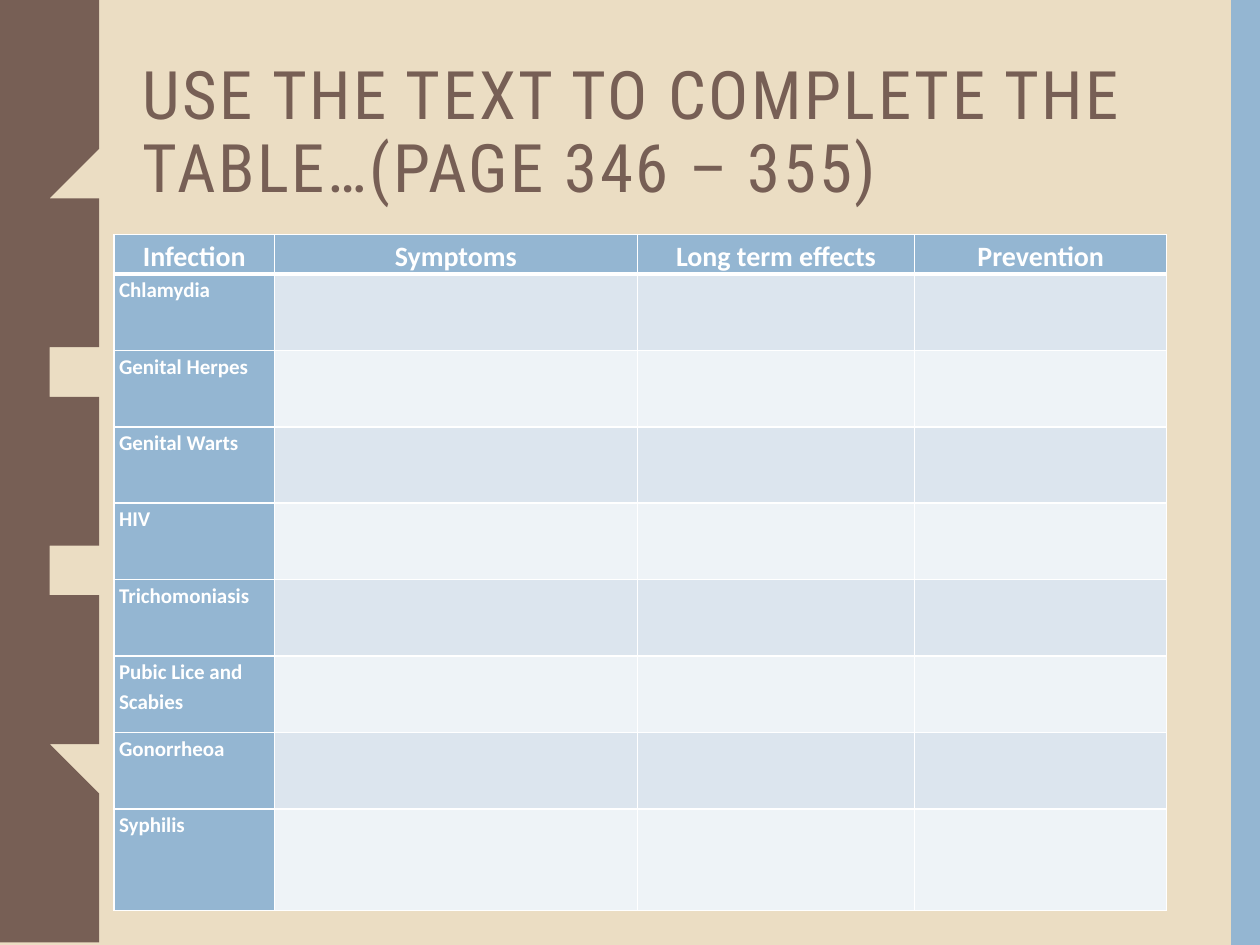
import pptx
import pptx.util
import pptx.dml.color
import pptx.enum.shapes
import pptx.enum.text
import pptx.oxml
import pptx.oxml.ns
from pptx.util import Cm, Pt

BROWN, BLUE, SAND, WHITE = "775F55", "94B6D2", "EBDDC3", "FFFFFF"
BANDS = ["DCE5EE", "EEF3F7"]


def paint(fill, tone):
    fill.solid()
    fill.fore_color.rgb = pptx.dml.color.RGBColor.from_string(tone)


def edge(cell, side, width):
    cell._tc.get_or_add_tcPr().append(pptx.oxml.parse_xml(
        f'<a:ln{side} {pptx.oxml.ns.nsdecls("a")} w="{Pt(width)}"><a:solidFill>'
        f'<a:srgbClr val="{WHITE}"/></a:solidFill></a:ln{side}>'))


# Slide and background
deck = pptx.Presentation()
deck.slide_width, deck.slide_height = Cm(25.4), Cm(19.05)
slide = deck.slides.add_slide(deck.slide_layouts[5])
paint(slide.background.fill, SAND)

# Wavy band on the left: five waves, each half a mirror of the other
half = [(1.47, 0), (1.48, 0.18), (1.5, 0.36), (1.52, 0.51), (1.55, 0.64),
        (1.58, 0.74), (1.62, 0.84), (1.66, 0.97), (1.7, 1.07), (1.73, 1.17),
        (1.77, 1.27), (1.8, 1.4), (1.82, 1.55), (1.84, 1.73), (1.85, 1.9)]
pitch = 3.81
wave = half + [(x, pitch - y) for x, y in reversed(half)]
points = [(x, y + pitch * turn) for turn in range(5) for x, y in wave]
pen = slide.shapes.build_freeform(0, 0, scale=Cm(1))
pen.add_line_segments(points + [(0, 19.05)], close=True)
band = pen.convert_to_shape()

# Plain bar on the right
bar = slide.shapes.add_shape(pptx.enum.shapes.MSO_SHAPE.RECTANGLE,
                             Cm(24.82), 0, Cm(0.58), Cm(19.05))
for shape, tone in [(band, BROWN), (bar, BLUE)]:
    paint(shape.fill, tone)
    shape.line.fill.background()
    shape.shadow.inherit = False

# Title
title = slide.shapes.title
title.left, title.top = Cm(2.62), Cm(1.07)
title.width, title.height = Cm(21.2), Cm(4.14)
frame = title.text_frame
frame.text = "USE THE TEXT TO COMPLETE THE TABLE…(PAGE 346 – 355)"
frame.word_wrap = True
frame.auto_size = pptx.enum.text.MSO_AUTO_SIZE.NONE
frame.vertical_anchor = pptx.enum.text.MSO_ANCHOR.TOP
frame.margin_top = Cm(0.18)
para = frame.paragraphs[0]
para.alignment = pptx.enum.text.PP_ALIGN.LEFT
para.line_spacing = 0.9
para.font.name, para.font.size = "Roboto Condensed", Pt(38.2)
para.font.color.rgb = pptx.dml.color.RGBColor.from_string(BROWN)
para.runs[0]._r.get_or_add_rPr().set("spc", "150")

# Table
heads = ["Infection", "Symptoms", "Long term effects", "Prevention"]
names = ["Chlamydia", "Genital Herpes", "Genital Warts", "HIV", "Trichomoniasis",
         "Pubic Lice and Scabies", "Gonorrheoa", "Syphilis"]
widths = [3.23, 7.32, 5.59, 5.08]
heights = [0.77] + [1.54] * 7 + [2.05]
table = slide.shapes.add_table(len(heights), len(widths), Cm(2.3), Cm(4.73),
                               Cm(sum(widths)), Cm(sum(heights))).table
for col, width in zip(table.columns, widths):
    col.width = Cm(width)
for row, height in zip(table.rows, heights):
    row.height = Cm(height)

# Cells: blue headings, white rules, banded blanks
for r in range(len(heights)):
    for c in range(len(widths)):
        cell = table.cell(r, c)
        for side in "LRTB":
            thick = (r, side) in [(0, "B"), (1, "T")]
            edge(cell, side, 3 if thick else 1)
        label = r == 0 or c == 0
        paint(cell.fill, BLUE if label else BANDS[(r - 1) % 2])
        if not label:
            continue
        cell.margin_left = cell.margin_right = Cm(0.1)
        cell.margin_top = cell.margin_bottom = 0
        cell.text = heads[c] if r == 0 else names[r - 1]
        para = cell.text_frame.paragraphs[0]
        para.line_spacing = 1.15
        if r == 0:
            para.alignment = pptx.enum.text.PP_ALIGN.CENTER
        para.font.name, para.font.bold = "Calibri", True
        para.font.size = Pt(16 if r == 0 else 12)
        para.font.color.rgb = pptx.dml.color.RGBColor.from_string(WHITE)

deck.save("out.pptx")
